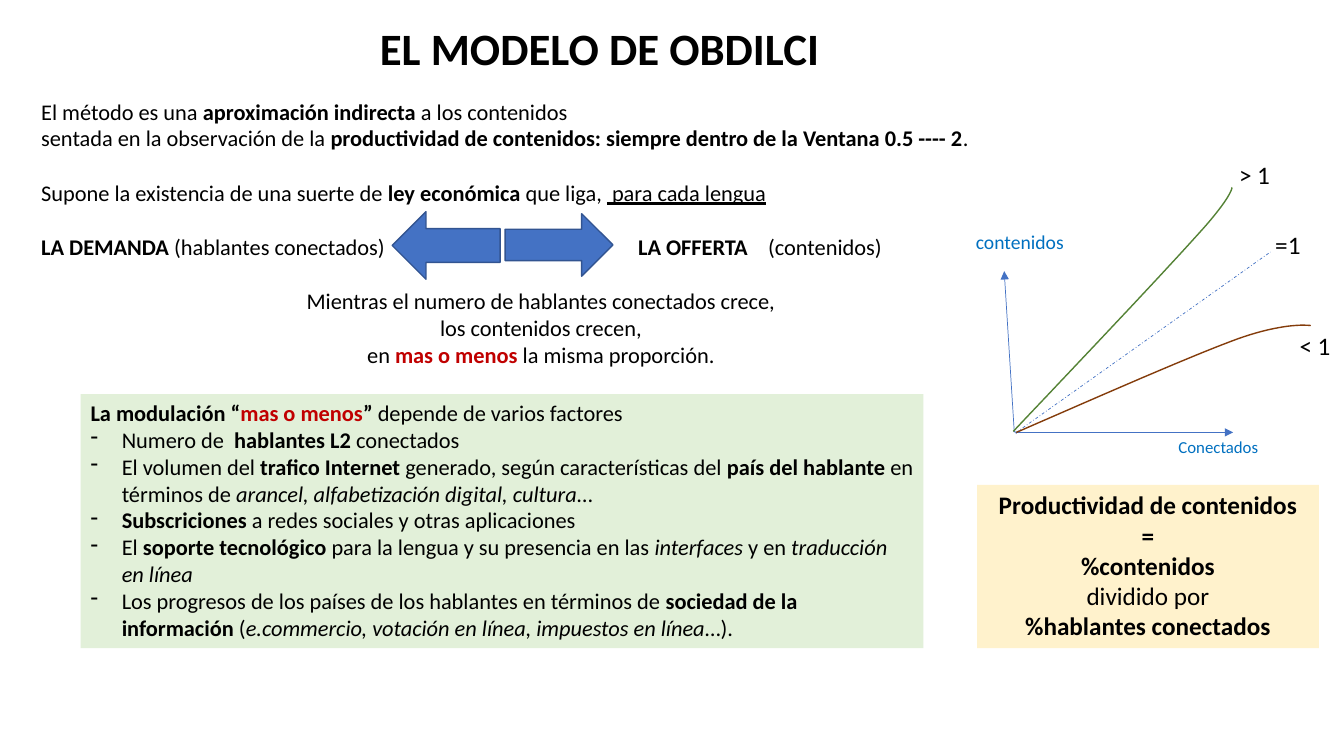
from dataclasses import dataclass
from typing import NamedTuple

from lxml.etree import SubElement
from pptx import Presentation
from pptx.dml.color import RGBColor
from pptx.enum.dml import MSO_LINE
from pptx.enum.shapes import MSO_CONNECTOR, MSO_SHAPE
from pptx.enum.text import MSO_AUTO_SIZE, PP_ALIGN
from pptx.oxml.ns import qn
from pptx.util import Inches, Pt

COLORS = {
    "black": "000000", "red": "C00000", "label": "0070C0",
    "blue": "4472C4", "navy": "325491", "green": "548235", "brown": "843C0B",
    "pale_green": "E2F0D9", "pale_yellow": "FFF2CC",
}
FONT = "Calibri"
BLANK_LINE = 19.5  # height of one 16 pt line, in points
HANGING = 0.31

Point = tuple[float, float]


class Span(NamedTuple):
    text: str
    style: str = ""  # letters: b bold, i italic, u underline, r red


@dataclass
class Para:
    spans: list[Span]
    centered: bool = False
    bullet: bool = False
    before: float = 0
    tabs: tuple[float, ...] = ()


@dataclass
class Block:
    at: tuple[float, float, float, float]
    paras: list[Para]
    size: float
    color: str = "black"
    fill: str = ""
    wrap: bool = True


@dataclass
class Axis:
    start: Point
    end: Point
    arrow: bool = True


@dataclass
class Curve:
    start: Point
    beziers: list[tuple[Point, Point, Point]]
    color: str


def rgb(name: str) -> RGBColor:
    return RGBColor.from_string(COLORS[name])


def label(left: float, top: float, width: float, height: float, text: str,
          size: float, color: str = "black", style: str = "") -> Block:
    return Block((left, top, width, height), [Para([Span(text, style)])], size, color, wrap=False)


def add_para(paragraph, para: Para, size: float, color: str) -> None:
    properties = paragraph._p.get_or_add_pPr()
    if para.bullet:
        properties.set("marL", str(Inches(HANGING)))
        properties.set("indent", str(-Inches(HANGING)))
        SubElement(properties, qn("a:buChar"), char="-")
    if para.tabs:
        tab_list = SubElement(properties, qn("a:tabLst"))
        for stop in para.tabs:
            SubElement(tab_list, qn("a:tab"), pos=str(Inches(stop)), algn="l")
    if para.centered:
        paragraph.alignment = PP_ALIGN.CENTER
    if para.before:
        paragraph.space_before = Pt(para.before)
    font = paragraph.font
    font.name, font.size = FONT, Pt(size)
    font.color.rgb = rgb(color)
    font.bold = all("b" in span.style for span in para.spans)
    for span in para.spans:
        run = paragraph.add_run()
        run.text = span.text
        if ("b" in span.style) != font.bold:
            run.font.bold = "b" in span.style
        if "i" in span.style:
            run.font.italic = True
        if "u" in span.style:
            run.font.underline = True
        if "r" in span.style:
            run.font.color.rgb = rgb("red")


def add_block(page, block: Block) -> None:
    box = page.shapes.add_textbox(*map(Inches, block.at))
    if block.fill:
        box.fill.solid()
        box.fill.fore_color.rgb = rgb(block.fill)
    frame = box.text_frame
    frame.word_wrap = block.wrap
    frame.auto_size = MSO_AUTO_SIZE.SHAPE_TO_FIT_TEXT
    for index, para in enumerate(block.paras):
        paragraph = frame.add_paragraph() if index else frame.paragraphs[0]
        add_para(paragraph, para, block.size, block.color)


def add_axis(page, axis: Axis) -> None:
    line = page.shapes.add_connector(MSO_CONNECTOR.STRAIGHT, *map(Inches, axis.start + axis.end))
    line.line.color.rgb = rgb("blue")
    line.line.width = Pt(0.5)
    if axis.arrow:
        SubElement(line.line._get_or_add_ln(), qn("a:tailEnd"), type="triangle")
    else:
        line.line.dash_style = MSO_LINE.DASH_DOT
    SubElement(line._element.spPr, qn("a:effectLst"))


def bezier_point(t: float, corners: tuple[Point, ...]) -> Point:
    weights = ((1 - t) ** 3, 3 * t * (1 - t) ** 2, 3 * t * t * (1 - t), t ** 3)
    x, y = (sum(w * c[i] for w, c in zip(weights, corners)) for i in (0, 1))
    return Inches(x), Inches(y)


def add_curve(page, curve: Curve, steps: int = 24) -> None:
    builder = page.shapes.build_freeform(*map(Inches, curve.start))
    start = curve.start
    for bezier in curve.beziers:
        points = [bezier_point(step / steps, (start, *bezier)) for step in range(1, steps + 1)]
        builder.add_line_segments(points, close=False)
        start = bezier[-1]
    outline = builder.convert_to_shape()
    outline.shadow.inherit = False
    outline.fill.background()
    outline.line.color.rgb = rgb(curve.color)
    outline.line.width = Pt(1)


def add_preset(page, kind, at, line: str, width: float, fill: str = "", rotation: float = 0) -> None:
    shape = page.shapes.add_shape(kind, *map(Inches, at))
    shape.shadow.inherit = False
    shape.rotation = rotation
    if fill:
        shape.fill.solid()
        shape.fill.fore_color.rgb = rgb(fill)
    else:
        shape.fill.background()
    shape.line.color.rgb = rgb(line)
    shape.line.width = Pt(width)


METHOD = Block((0.31, 0.92, 10.11, 3.1), [
    Para([Span("El método es una "), Span("aproximación indirecta ", "b"), Span("a los contenidos")]),
    Para([Span("sentada en la observación de la "),
          Span("productividad de contenidos: siempre dentro de la Ventana 0.5 ---- 2", "b"), Span(".")]),
    Para([Span("Supone la existencia de una suerte de "), Span("ley económica", "b"),
          Span(" que liga, "), Span(" para cada lengua", "u")], before=BLANK_LINE),
    Para([Span("LA DEMANDA", "b"), Span(" (hablantes conectados)\t"),
          Span("LA OFFERTA", "b"), Span("\t(contenidos)")], before=BLANK_LINE, tabs=(5.92, 7.21)),
    Para([Span("Mientras el numero de hablantes conectados crece,")], centered=True, before=BLANK_LINE),
    Para([Span("los contenidos crecen,")], centered=True),
    Para([Span("en "), Span("mas o menos ", "br"), Span("la misma proporción.")], centered=True),
], 16)

FACTORS = Block((0.8, 3.91, 8.36, 2.52), [
    Para([Span("La modulación “", "b"), Span("mas o menos", "br"), Span("” ", "b"),
          Span("depende de varios factores")]),
    Para([Span("Numero de  "), Span("hablantes L2 ", "b"), Span("conectados")], bullet=True),
    Para([Span("El volumen del "), Span("trafico Internet ", "b"),
          Span("generado, según características del "), Span("país del hablante ", "b"),
          Span("en términos de "), Span("arancel, alfabetización digital, cultura", "i"),
          Span("…")], bullet=True),
    Para([Span("Subscriciones", "b"), Span(" a redes sociales y otras aplicaciones")], bullet=True),
    Para([Span("El "), Span("soporte tecnológico ", "b"),
          Span("para la lengua y su presencia en las "), Span("interfaces", "i"),
          Span(" y en "), Span("traducción en línea", "i")], bullet=True),
    Para([Span("Los progresos de los países de los hablantes en términos de"),
          Span(" sociedad de la información ", "b"), Span("("),
          Span("e.commercio, votación en línea, impuestos en línea", "i"), Span("…).")], bullet=True),
], 16, fill="pale_green")

FORMULA = Block((9.69, 4.81, 3.39, 1.62), [
    Para([Span(text, style)], centered=True) for text, style in (
        ("Productividad de contenidos", "b"), ("=", "b"), ("%contenidos", "b"),
        ("dividido por", ""), ("%hablantes conectados", "b"))
], 18, fill="pale_yellow")

LABELS = [
    label(11.59, 4.28, 1, 0.3, "Conectados", 12, "label"),
    label(9.58, 2.23, 1.08, 0.34, "contenidos", 14, "label"),
    label(12.55, 2.23, 0.46, 0.4, "=1", 18),
    label(12.19, 1.53, 0.51, 0.4, "> 1", 18),
    label(12.79, 3.23, 0.51, 0.4, "< 1", 18),
]
AXES = [
    Axis((10.06, 4.29), (9.96, 2.69)),
    Axis((10.08, 4.29), (12.23, 4.29)),
    Axis((10.08, 4.29), (12.6, 2.5), arrow=False),
]
CURVES = [
    Curve((10.08, 4.29), [((10.93, 3.92), (11.79, 3.54), (12.28, 3.36)),
                          ((12.76, 3.19), (13, 3.23), (13, 3.23))], "brown"),
    Curve((10.05, 4.28), [((10.77, 3.52), (11.49, 2.76), (11.85, 2.36)),
                          ((12.22, 1.96), (12.22, 1.86), (12.22, 1.86))], "green"),
]


def main() -> None:
    deck = Presentation()
    deck.slide_width, deck.slide_height = Inches(13.33), Inches(7.5)
    page = deck.slides.add_slide(deck.slide_layouts[6])

    # Title and method
    add_block(page, label(3.67, 0.16, 4.6, 0.64, "EL MODELO DE OBDILCI", 32, style="b"))
    add_block(page, METHOD)

    # Arrows between demand and supply
    add_preset(page, MSO_SHAPE.RIGHT_ARROW, (5.01, 2.12, 1.07, 0.62), "navy", 1, "blue")
    add_preset(page, MSO_SHAPE.RIGHT_ARROW, (3.89, 2.1, 1.07, 0.67), "navy", 1, "blue", 180)

    # Productivity sketch
    for axis in AXES:
        add_axis(page, axis)
    add_preset(page, MSO_SHAPE.ARC, (10.03, 4.28, 0.05, 0.05), "blue", 0.5)
    for curve in CURVES:
        add_curve(page, curve)

    # Sketch labels and coloured panels
    for block in [*LABELS, FACTORS, FORMULA]:
        add_block(page, block)

    deck.save("out.pptx")


if __name__ == "__main__":
    main()
